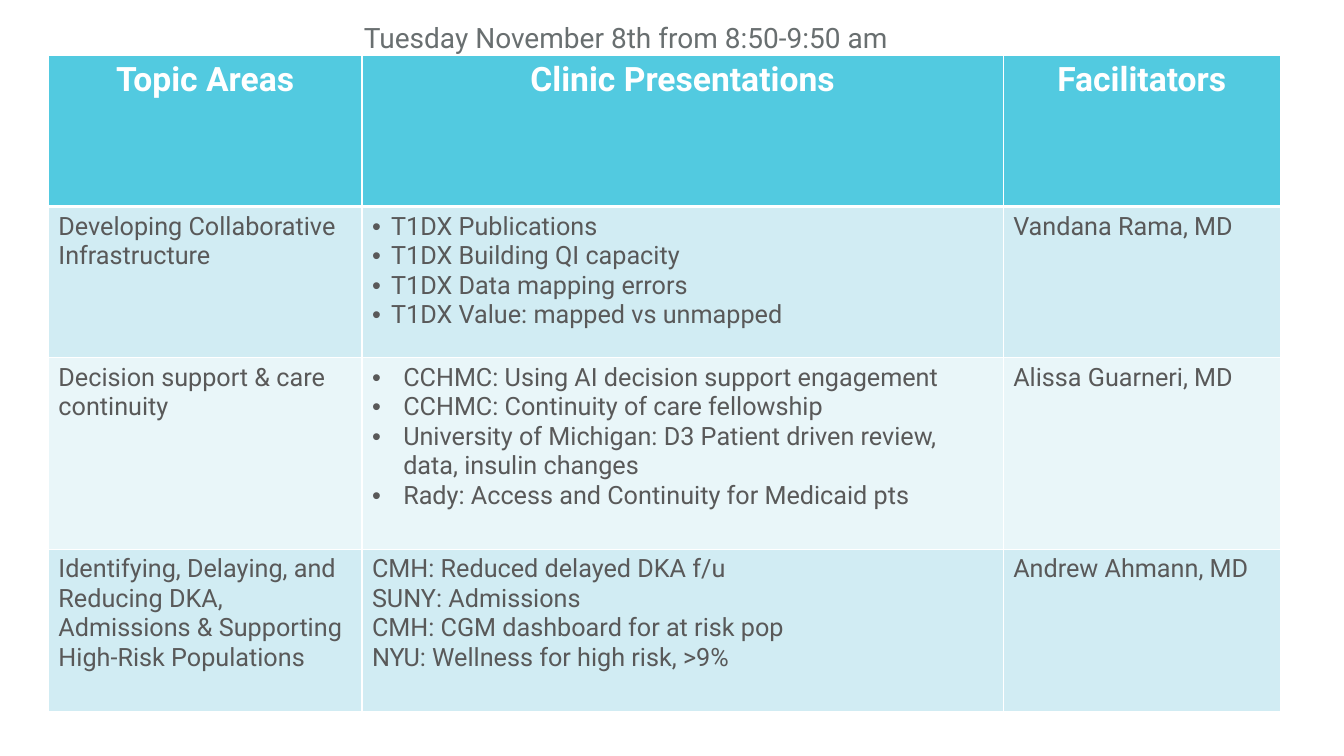
from lxml import etree
from pptx import Presentation
from pptx.dml.color import RGBColor
from pptx.enum.text import MSO_ANCHOR, PP_ALIGN
from pptx.oxml.ns import qn
from pptx.util import Inches, Pt

LEFT, CENTER = PP_ALIGN.LEFT, PP_ALIGN.CENTER
MIDDLE = MSO_ANCHOR.MIDDLE
FONT = "Roboto"
WHITE, HEADER_FILL, TEXT_COLOR = "FFFFFF", "52CAE0", "595959"
BAND_FILLS = ["D1ECF3", "E9F6F9"]

COLUMN_WIDTHS = [3.11, 6.36, 2.75]
ROW_HEIGHTS = [1.5, 1.5, 1.9, 1.61]
BULLET_INDENTS = {1: 0.19, 2: 0.31}  # table row: hanging indent
ROWS = [
    ["Topic Areas", "Clinic Presentations", "Facilitators"],
    ["Developing Collaborative Infrastructure",
     "T1DX Publications\nT1DX Building QI capacity\n"
     "T1DX Data mapping errors\nT1DX Value: mapped vs unmapped",
     "Vandana Rama, MD"],
    ["Decision support & care continuity",
     "CCHMC: Using AI decision support engagement\n"
     "CCHMC: Continuity of care fellowship\n"
     "University of Michigan: D3 Patient driven review, data, insulin changes\n"
     "Rady: Access and Continuity for Medicaid pts",
     "Alissa Guarneri, MD"],
    ["Identifying, Delaying, and Reducing DKA, Admissions & Supporting "
     "High-Risk Populations",
     "CMH: Reduced delayed DKA f/u\nSUNY: Admissions\n"
     "CMH: CGM dashboard for at risk pop\nNYU: Wellness for high risk, >9%",
     "Andrew Ahmann, MD"],
]


def rgb(color):
    return RGBColor.from_string(color)


def format_font(paragraph, size, color, bold=False):
    for run in paragraph.runs:
        run.font.name = FONT
        run.font.size = Pt(size)
        run.font.bold = bold
        run.font.color.rgb = rgb(color)


presentation = Presentation()
presentation.slide_width = Inches(13.33)
presentation.slide_height = Inches(7.5)
slide = presentation.slides.add_slide(presentation.slide_layouts[5])

# Session time
title = slide.shapes.title
title.left, title.top = Inches(3.51), Inches(0.15)
title.width, title.height = Inches(6.67), Inches(0.44)
title.text_frame.text = "Tuesday November 8th from 8:50-9:50 am"
title.text_frame.vertical_anchor = MIDDLE
title.text_frame.paragraphs[0].alignment = LEFT
format_font(title.text_frame.paragraphs[0], 20, "696F70")

# Schedule table
table = slide.shapes.add_table(
    len(ROWS), len(COLUMN_WIDTHS), Inches(0.48), Inches(0.55),
    Inches(sum(COLUMN_WIDTHS)), Inches(sum(ROW_HEIGHTS))).table
for column, width in zip(table.columns, COLUMN_WIDTHS):
    column.width = Inches(width)
for row, height in zip(table.rows, ROW_HEIGHTS):
    row.height = Inches(height)

for row_index, texts in enumerate(ROWS):
    is_header = row_index == 0
    for column_index, text in enumerate(texts):
        cell = table.cell(row_index, column_index)
        cell.text_frame.text = text

        # White borders, thicker between the header and the body
        properties = cell._tc.get_or_add_tcPr()
        for side in ["L", "R", "T", "B"]:
            thick = (is_header and side == "B") or (row_index == 1 and side == "T")
            line = etree.SubElement(properties, qn(f"a:ln{side}"),
                                    w=str(Pt(3 if thick else 1)))
            line_fill = etree.SubElement(line, qn("a:solidFill"))
            etree.SubElement(line_fill, qn("a:srgbClr"), val=WHITE)
        cell.fill.solid()
        cell.fill.fore_color.rgb = rgb(
            HEADER_FILL if is_header else BAND_FILLS[(row_index - 1) % 2])

        for paragraph in cell.text_frame.paragraphs:
            paragraph.alignment = CENTER if is_header else LEFT
            if column_index == 1 and row_index in BULLET_INDENTS:
                indent = Inches(BULLET_INDENTS[row_index])
                paragraph_properties = paragraph._p.get_or_add_pPr()
                paragraph_properties.set("marL", str(indent))
                paragraph_properties.set("indent", str(-indent))
                etree.SubElement(paragraph_properties, qn("a:buFont"), typeface="Arial")
                etree.SubElement(paragraph_properties, qn("a:buChar"), char="•")
            if is_header:
                format_font(paragraph, 24, WHITE, bold=True)
            else:
                format_font(paragraph, 18, TEXT_COLOR)

presentation.save("out.pptx")
